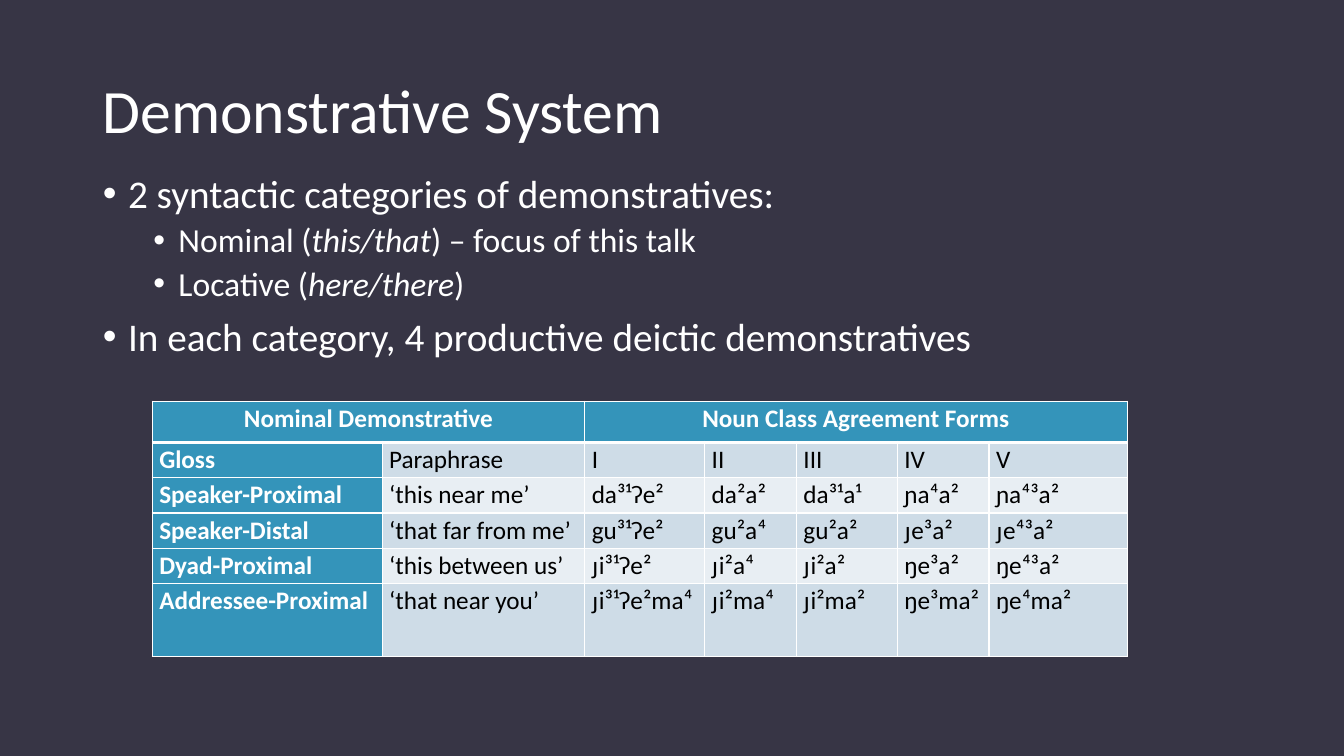
from lxml import etree
from pptx import Presentation
from pptx import util as u
from pptx.dml.color import RGBColor
from pptx.enum import text
from pptx.oxml import ns

FONT = "Calibri"
WHITE, BLACK, BLUE = "FFFFFF", "000000", "3494BA"
BANDS = ["E8EEF3", "CEDCE7"]


def style(run, size, color, bold=False, slant=False):
    font = run.font
    font.name, font.size = FONT, u.Pt(size)
    font.bold, font.italic = bold, slant
    font.color.rgb = RGBColor.from_string(color)


def edge(cell, side, width):
    """Draw a white border on one side (L, R, T or B) of a cell."""
    line = etree.SubElement(cell._tc.get_or_add_tcPr(), ns.qn("a:ln" + side),
                            w=str(u.Pt(width)))
    fill = etree.SubElement(line, ns.qn("a:solidFill"))
    etree.SubElement(fill, ns.qn("a:srgbClr"), val=WHITE)


deck = Presentation()
deck.slide_width, deck.slide_height = u.Inches(13.33), u.Inches(7.5)
slide = deck.slides.add_slide(deck.slide_layouts[1])
slide.background.fill.solid()
slide.background.fill.fore_color.rgb = RGBColor.from_string("373545")

# Title and body share a left edge and a width
title, body = slide.placeholders
for holder, top, height, anchor in [
        (title, 0.4, 1.45, text.MSO_ANCHOR.MIDDLE),
        (body, 1.68, 4.76, text.MSO_ANCHOR.TOP)]:
    holder.left, holder.width = u.Inches(0.92), u.Inches(11.5)
    holder.top, holder.height = u.Inches(top), u.Inches(height)
    holder.text_frame.auto_size = text.MSO_AUTO_SIZE.NONE
    holder.text_frame.vertical_anchor = anchor

title.text_frame.text = "Demonstrative System"
head = title.text_frame.paragraphs[0]
head.alignment, head.line_spacing = text.PP_ALIGN.LEFT, 0.9
style(head.runs[0], 44, WHITE)

# Each point: level, then runs in which every second one is italic
points = [
    (0, ["2 syntactic categories of demonstratives:"]),
    (1, ["Nominal (", "this/that", ") – focus of this talk"]),
    (1, ["Locative (", "here/there", ")"]),
    (0, ["In each category, 4 productive deictic demonstratives"]),
]
frame = body.text_frame
for i, (level, parts) in enumerate(points):
    para = frame.add_paragraph() if i else frame.paragraphs[0]
    para.level, para.line_spacing = level, 0.9
    para.space_before = u.Pt(5 if level else 10)
    props = para._p.get_or_add_pPr()
    props.set("marL", str(u.Inches(0.25 + 0.5 * level)))
    props.set("indent", str(u.Inches(-0.25)))
    etree.SubElement(props, ns.qn("a:buFont"), typeface="Arial")
    etree.SubElement(props, ns.qn("a:buChar"), char="•")
    for j, part in enumerate(parts):
        run = para.add_run()
        run.text = part
        style(run, 24 if level else 28, WHITE, slant=j % 2 == 1)

# Table of noun class forms
rows = [
    ["Nominal Demonstrative", "", "Noun Class Agreement Forms", "", "", "", ""],
    ["Gloss", "Paraphrase", "I", "II", "III", "IV", "V"],
    ["Speaker-Proximal", "‘this near me’",
     "da³¹ʔe²", "da²a²", "da³¹a¹", "ɲa⁴a²", "ɲa⁴³a²"],
    ["Speaker-Distal", "‘that far from me’",
     "gu³¹ʔe²", "gu²a⁴", "gu²a²", "ɟe³a²", "ɟe⁴³a²"],
    ["Dyad-Proximal", "‘this between us’",
     "ɟi³¹ʔe²", "ɟi²a⁴", "ɟi²a²", "ŋe³a²", "ŋe⁴³a²"],
    ["Addressee-Proximal", "‘that near you’",
     "ɟi³¹ʔe²ma⁴", "ɟi²ma⁴", "ɟi²ma²", "ŋe³ma²", "ŋe⁴ma²"],
]
widths = [2.28, 2.01, 1.19, 0.91, 1, 0.91, 1.37]
heights = [0.41] + [0.35] * 4 + [0.72]
table = slide.shapes.add_table(
    len(rows), len(widths), u.Inches(1.51), u.Inches(3.98),
    u.Inches(sum(widths)), u.Inches(sum(heights))).table
for col, width in zip(table.columns, widths):
    col.width = u.Inches(width)
for row, height in zip(table.rows, heights):
    row.height = u.Inches(height)
for first, last in [(0, 1), (2, 6)]:
    table.cell(0, first).merge(table.cell(0, last))

for r, row in enumerate(rows):
    for c, word in enumerate(row):
        cell = table.cell(r, c)
        label = r == 0 or c == 0
        cell.margin_left = cell.margin_right = u.Inches(0.07)
        cell.margin_top = cell.margin_bottom = 0
        for side in "LRTB":
            edge(cell, side, 3 if (r, side) in [(0, "B"), (1, "T")] else 1)
        cell.fill.solid()
        cell.fill.fore_color.rgb = RGBColor.from_string(
            BLUE if label else BANDS[r % 2])
        if word:
            cell.text_frame.text = word
            para = cell.text_frame.paragraphs[0]
            para.line_spacing = 1.07
            para.alignment = (text.PP_ALIGN.LEFT if r
                              else text.PP_ALIGN.CENTER)
            style(para.runs[0], 18, WHITE if label else BLACK, bold=label)

deck.save("out.pptx")
